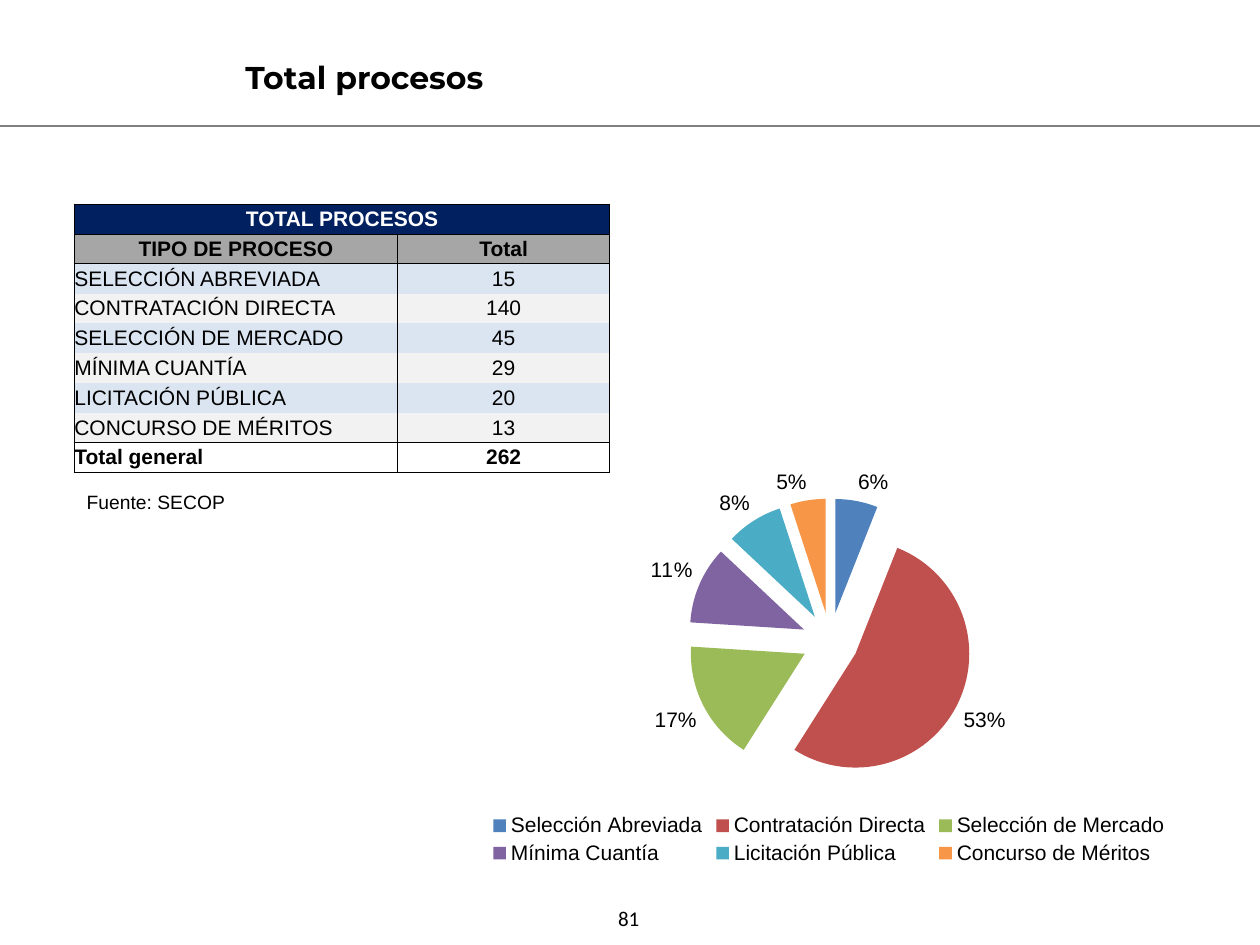
from dataclasses import dataclass
from typing import Optional

from lxml.etree import SubElement
from pptx import Presentation
from pptx.chart.data import CategoryChartData
from pptx.dml.color import RGBColor
from pptx.enum.chart import XL_CHART_TYPE as ChartType
from pptx.enum.chart import XL_LABEL_POSITION as LabelPosition
from pptx.enum.chart import XL_LEGEND_POSITION as LegendPosition
from pptx.enum.shapes import MSO_CONNECTOR as Connector
from pptx.enum.text import MSO_ANCHOR as Anchor
from pptx.enum.text import PP_ALIGN as Align
from pptx.oxml import parse_xml
from pptx.oxml.ns import nsdecls, qn
from pptx.util import Inches, Length, Pt

COLUMNS, ROWS = 100, 75  # slide grid of square units
BLACK = RGBColor(0x00, 0x00, 0x00)
WHITE = RGBColor(0xFF, 0xFF, 0xFF)
RULE_GRAY = RGBColor(0x80, 0x80, 0x80)
NAVY = RGBColor(0x00, 0x20, 0x60)
HEADER_GRAY = RGBColor(0xA6, 0xA6, 0xA6)
STRIPES = (RGBColor(0xDB, 0xE5, 0xF1), RGBColor(0xF2, 0xF2, 0xF2))


@dataclass(frozen=True)
class Area:
    left: float
    top: float
    width: float
    height: float

    def emu(self) -> tuple[Length, ...]:
        return tuple(grid(n) for n in (self.left, self.top, self.width, self.height))


@dataclass(frozen=True)
class Label:
    text: str
    area: Area
    font: str
    size: float
    bold: bool = False
    align: Align = Align.LEFT
    anchor: Anchor = Anchor.MIDDLE


@dataclass(frozen=True)
class Process:
    name: str
    count: int
    percent: int
    color: RGBColor


@dataclass(frozen=True)
class TableRow:
    texts: tuple[str, ...]
    fill: Optional[RGBColor]
    color: RGBColor = BLACK
    bold: bool = True
    centered: bool = True
    edges: str = "LRTB"


PROCESSES = (
    Process("Selección Abreviada", 15, 6, RGBColor(0x4F, 0x81, 0xBD)),
    Process("Contratación Directa", 140, 53, RGBColor(0xC0, 0x50, 0x4D)),
    Process("Selección de Mercado", 45, 17, RGBColor(0x9B, 0xBB, 0x59)),
    Process("Mínima Cuantía", 29, 11, RGBColor(0x80, 0x64, 0xA2)),
    Process("Licitación Pública", 20, 8, RGBColor(0x4B, 0xAC, 0xC6)),
    Process("Concurso de Méritos", 13, 5, RGBColor(0xF7, 0x96, 0x46)),
)
LABELS = (
    Label("Total procesos", Area(18.5, 3.9, 50.4, 4.4), "Montserrat", 18, bold=True),
    Label("Fuente: SECOP", Area(5.9, 38.4, 28, 2.9), "Arial", 11, anchor=Anchor.TOP),
    Label("81", Area(47.3, 70.7, 5.2, 4.4), "Calibri", 12, align=Align.CENTER),
)
TABLE_AREA = Area(5.9, 16.2, 42.5, 21.3)
NAME_COLUMN = 25.65
CHART_AREA = Area(34.3, 35.9, 63, 33.1)


def grid(units: float) -> Length:
    return Inches(units / 10)


def set_font(font, name: str, size: float, color: RGBColor, bold: bool = False) -> None:
    font.name, font.size, font.bold = name, Pt(size), bold
    font.color.rgb = color


def add_label(slide, label: Label) -> None:
    frame = slide.shapes.add_textbox(*label.area.emu()).text_frame
    frame.word_wrap = True
    frame.vertical_anchor = label.anchor
    para = frame.paragraphs[0]
    para.text, para.alignment = label.text, label.align
    set_font(para.font, label.font, label.size, BLACK, label.bold)


def add_rule(slide, row: float) -> None:
    line = slide.shapes.add_connector(
        Connector.STRAIGHT, 0, grid(row), grid(COLUMNS), grid(row))
    line.line.color.rgb = RULE_GRAY
    line.line.width = Pt(0.75)
    SubElement(line._element.spPr, qn("a:effectLst"))


def set_borders(cell, edges: str) -> None:
    """Draw the named edges (L, R, T, B) and clear the others."""
    for index, side in enumerate("LRTB"):
        paint = (f'<a:solidFill><a:srgbClr val="{BLACK}"/></a:solidFill>'
                 if side in edges else "<a:noFill/>")
        border = parse_xml(
            f'<a:ln{side} {nsdecls("a")} w="{Pt(0.5)}">{paint}</a:ln{side}>')
        cell._tc.get_or_add_tcPr().insert(index, border)


def fill_cell(cell, text: str, row: TableRow, align: Align) -> None:
    cell.margin_left = cell.margin_right = cell.margin_top = cell.margin_bottom = 0
    cell.vertical_anchor = Anchor.MIDDLE
    if row.fill is None:
        cell.fill.background()
    else:
        cell.fill.solid()
        cell.fill.fore_color.rgb = row.fill
    set_borders(cell, row.edges)
    para = cell.text_frame.paragraphs[0]
    para.text, para.alignment = text, align
    set_font(para.font, "Arial", 12, row.color, row.bold)


def table_rows() -> list[TableRow]:
    last = len(PROCESSES) - 1
    body = [
        TableRow((process.name.upper(), str(process.count)), STRIPES[i % 2],
                 bold=False, centered=False,
                 edges="LR" + "T" * (i == 0) + "B" * (i == last))
        for i, process in enumerate(PROCESSES)
    ]
    total = sum(process.count for process in PROCESSES)
    return [
        TableRow(("TOTAL PROCESOS", ""), NAVY, WHITE),
        TableRow(("TIPO DE PROCESO", "Total"), HEADER_GRAY),
        *body,
        TableRow(("Total general", str(total)), None, centered=False),
    ]


def add_process_table(slide) -> None:
    rows = table_rows()
    table = slide.shapes.add_table(len(rows), 2, *TABLE_AREA.emu()).table
    table.first_row = table.horz_banding = False
    table.columns[0].width = grid(NAME_COLUMN)
    table.columns[1].width = grid(TABLE_AREA.width - NAME_COLUMN)
    for r, row in enumerate(rows):
        for c, text in enumerate(row.texts):
            align = Align.CENTER if row.centered or c else Align.LEFT
            fill_cell(table.cell(r, c), text, row, align)
    table.cell(0, 0).merge(table.cell(0, 1))


def add_process_pie(slide) -> None:
    data = CategoryChartData()
    data.categories = [process.name for process in PROCESSES]
    data.add_series("Series 1", [process.percent for process in PROCESSES])
    chart = slide.shapes.add_chart(ChartType.PIE, *CHART_AREA.emu(), data).chart
    set_font(chart.font, "Arial", 12, BLACK)
    chart.has_title = False
    chart.has_legend = True
    chart.legend.position = LegendPosition.BOTTOM
    chart.legend.include_in_layout = False

    plot = chart.plots[0]
    plot.vary_by_categories = True
    series = plot.series[0]
    explosion = parse_xml(f'<c:explosion {nsdecls("c")} val="25"/>')
    series._element.find(qn("c:tx")).addnext(explosion)
    for i, process in enumerate(PROCESSES):
        fill = series.points[i].format.fill
        fill.solid()
        fill.fore_color.rgb = process.color

    plot.has_data_labels = True
    labels = plot.data_labels
    labels.show_percentage, labels.show_value = True, False
    labels.number_format, labels.number_format_is_linked = "0%", False
    labels.position = LabelPosition.OUTSIDE_END


def main() -> None:
    deck = Presentation()
    deck.slide_width, deck.slide_height = grid(COLUMNS), grid(ROWS)
    slide = deck.slides.add_slide(deck.slide_layouts[6])
    add_rule(slide, 10)
    add_process_table(slide)
    add_process_pie(slide)
    for label in LABELS:
        add_label(slide, label)
    deck.save("out.pptx")


if __name__ == "__main__":
    main()
